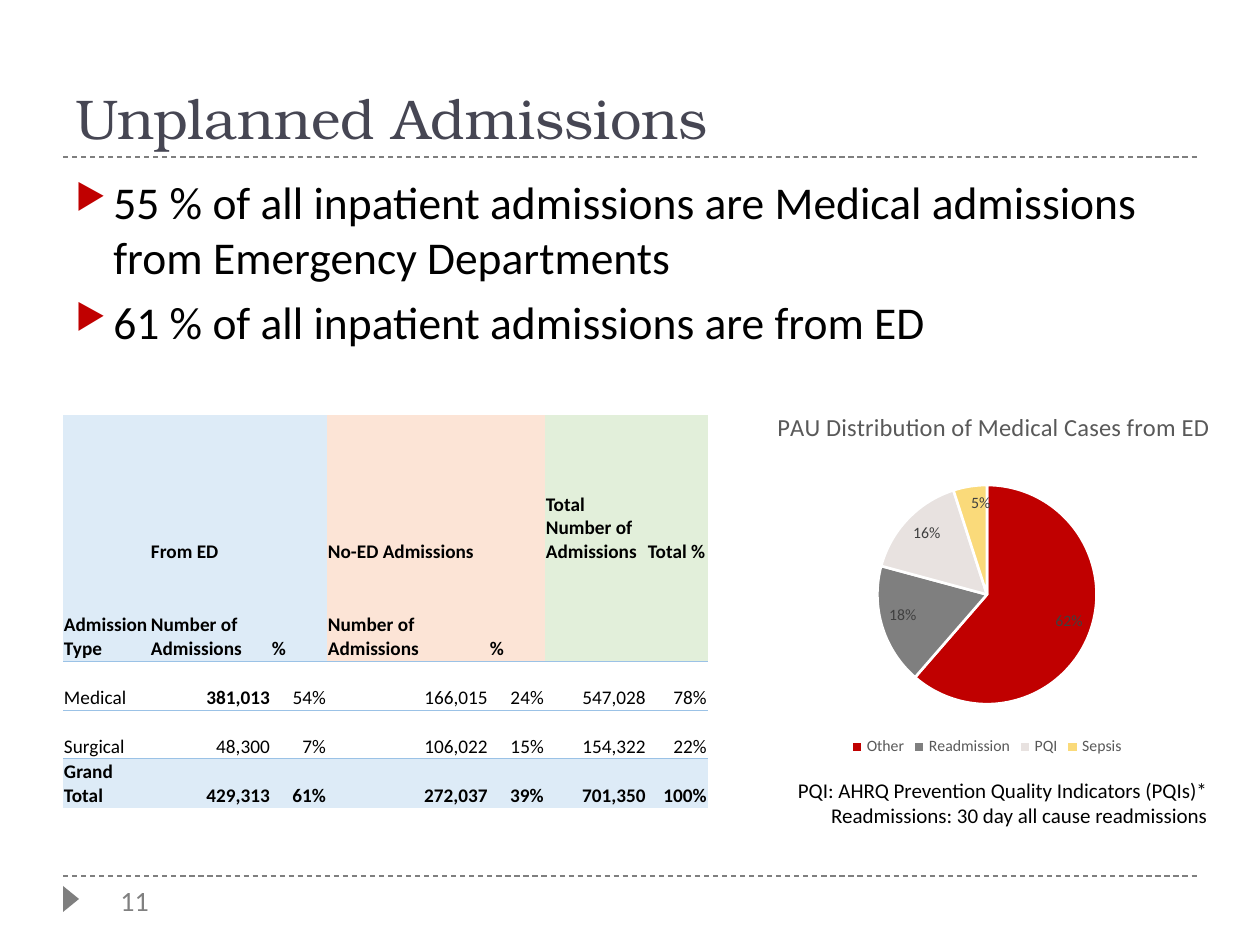
import lxml.etree
import pptx
import pptx.chart.data
import pptx.dml.color
import pptx.enum.chart
import pptx.enum.dml
import pptx.enum.shapes
import pptx.enum.text
import pptx.oxml.ns
import pptx.util

SCALE = 914400 / 126
GRAY, BLACK, RED = "7F7F7F", "000000", "C00000"
BLUE, ORANGE, GREEN = "DDEBF7", "FCE4D6", "E2EFDA"
ALIGN = pptx.enum.text.PP_ALIGN
ANCHOR = pptx.enum.text.MSO_ANCHOR


def px(*lengths):
    return [pptx.util.Emu(round(length * SCALE)) for length in lengths]


def color(value):
    return pptx.dml.color.RGBColor.from_string(value)


def apply(target, values):
    for name, value in values.items():
        setattr(target, name, value)


def add_xml(parent, tag, **attributes):
    element = lxml.etree.SubElement(parent, pptx.oxml.ns.qn(tag))
    for name, value in attributes.items():
        element.set(name, str(value))
    return element


def set_layout(parent, **fractions):
    layout = parent.find(pptx.oxml.ns.qn("c:layout"))
    if layout is None:
        layout = lxml.etree.Element(pptx.oxml.ns.qn("c:layout"))
        position = 1 if parent.tag.endswith("title") else 0
        parent.insert(position, layout)
    manual = add_xml(layout, "c:manualLayout")
    if "w" in fractions:
        add_xml(manual, "c:layoutTarget", val="inner")
    for axis in "xy":
        add_xml(manual, f"c:{axis}Mode", val="edge")
    for name, value in fractions.items():
        add_xml(manual, f"c:{name}", val=value)


class SlideBuilder:
    font_name = "Calibri"

    def __init__(self, presentation):
        self.slide = presentation.slides.add_slide(presentation.slide_layouts[5])

    def font(self, font, size, value=BLACK, **extra):
        apply(font, {"name": self.font_name, "size": pptx.util.Pt(size), **extra})
        font.color.rgb = color(value)

    def title(self, text, box):
        title = self.slide.shapes.title
        apply(title, dict(zip(("left", "top", "width", "height"), px(*box))))
        frame = title.text_frame
        apply(frame, {"text": text, "vertical_anchor": ANCHOR.BOTTOM, "word_wrap": True,
                      "auto_size": pptx.enum.text.MSO_AUTO_SIZE.NONE})
        frame.paragraphs[0].alignment = ALIGN.LEFT
        self.font(frame.paragraphs[0].font, 32, "464653", name="TeX Gyre Bonum")

    def text(self, lines, box, size, value=BLACK, align=ALIGN.LEFT, bullet=False, wrap=True):
        frame = self.slide.shapes.add_textbox(*px(*box)).text_frame
        apply(frame, {"text": "\n".join(lines), "word_wrap": wrap})
        for index, paragraph in enumerate(frame.paragraphs):
            paragraph.alignment = align
            if bullet:
                self.bullet(paragraph)
                paragraph.space_before = pptx.util.Pt(6 if index else 0)
            self.font(paragraph.font, size, value)

    def bullet(self, paragraph):
        properties = paragraph._p.get_or_add_pPr()
        indent = px(38)[0]
        properties.set("marL", str(indent))
        properties.set("indent", str(-indent))
        add_xml(add_xml(properties, "a:buClr"), "a:srgbClr", val=RED)
        add_xml(properties, "a:buSzPct", val=76000)
        add_xml(properties, "a:buChar", char="▶")

    def dashed_rule(self, left, right, top):
        connector = self.slide.shapes.add_connector(
            pptx.enum.shapes.MSO_CONNECTOR.STRAIGHT, *px(left, top, right, top))
        connector.line.color.rgb = color(GRAY)
        apply(connector.line, {"width": pptx.util.Pt(0.75),
                               "dash_style": pptx.enum.dml.MSO_LINE.DASH})
        add_xml(connector._element.spPr, "a:effectLst")

    def triangle(self, box):
        shape = self.slide.shapes.add_shape(
            pptx.enum.shapes.MSO_SHAPE.ISOSCELES_TRIANGLE, *px(*box))
        shape.rotation = 90
        shape.shadow.inherit = False
        shape.fill.solid()
        shape.fill.fore_color.rgb = color(GRAY)
        shape.line.fill.background()

    def pie(self, title, categories, values, colors, box):
        data = pptx.chart.data.CategoryChartData(number_format="0%")
        data.categories = categories
        data.add_series("Series 1", values)
        chart = self.slide.shapes.add_chart(
            pptx.enum.chart.XL_CHART_TYPE.PIE, *px(*box), data).chart
        self.font(chart.font, 10)
        chart.has_title = True
        chart.chart_title.text_frame.text = title
        self.font(chart.chart_title.text_frame.paragraphs[0].font, 14, "595959", bold=False)
        set_layout(chart.chart_title._element, x=0.16, y=0.06)
        chart.has_legend = True
        apply(chart.legend, {"position": pptx.enum.chart.XL_LEGEND_POSITION.BOTTOM,
                             "include_in_layout": False})
        self.font(chart.legend.font, 9, "595959")
        plot = chart.plots[0]
        apply(plot, {"vary_by_categories": True, "has_data_labels": True})
        apply(plot.data_labels, {
            "show_value": True, "show_percentage": False, "number_format": "0%",
            "number_format_is_linked": False,
            "position": pptx.enum.chart.XL_LABEL_POSITION.INSIDE_END})
        self.font(plot.data_labels.font, 9, "404040")
        for index, value in enumerate(colors):
            point_format = plot.series[0].points[index].format
            point_format.fill.solid()
            point_format.fill.fore_color.rgb = color(value)
            point_format.line.color.rgb = color("FFFFFF")
            point_format.line.width = pptx.util.Pt(1.5)
        set_layout(chart._chartSpace.chart.plotArea, x=0.325, y=0.27, w=0.35, h=0.58)

    def table(self, rows, fills, widths, heights, left, top, bold_cells, borders):
        table = self.slide.shapes.add_table(
            len(rows), len(widths), *px(left, top, sum(widths), sum(heights))).table
        apply(table, {"first_row": False, "horz_banding": False})
        style_id = table._tbl.tblPr.find(pptx.oxml.ns.qn("a:tableStyleId"))
        style_id.text = "{2D5ABB26-0587-4C30-8999-92F81FD0307C}"
        for column, width in zip(table.columns, px(*widths)):
            column.width = width
        for row, height in zip(table.rows, px(*heights)):
            row.height = height
        for row_index, texts in enumerate(rows):
            for column_index, text in enumerate(texts):
                cell = table.cell(row_index, column_index)
                self.border(cell, borders.get(row_index))
                self.cell(cell, text, fills[row_index][column_index],
                          (row_index, column_index) in bold_cells,
                          row_index > 1 and column_index > 0)

    def border(self, cell, edge):
        if edge:
            line = add_xml(cell._tc.get_or_add_tcPr(), edge, w=6350)
            add_xml(add_xml(line, "a:solidFill"), "a:srgbClr", val="9BC2E6")

    def cell(self, cell, text, fill, bold, numeric):
        margin = px(1)[0]
        apply(cell, {"margin_left": margin, "margin_right": margin, "margin_top": margin,
                     "margin_bottom": 0, "vertical_anchor": ANCHOR.BOTTOM})
        if fill:
            cell.fill.solid()
            cell.fill.fore_color.rgb = color(fill)
        else:
            cell.fill.background()
        if text:
            cell.text = text
            paragraph = cell.text_frame.paragraphs[0]
            paragraph.alignment = ALIGN.RIGHT if numeric else ALIGN.LEFT
            self.font(paragraph.font, 11, bold=bold)


def main():
    presentation = pptx.Presentation()
    presentation.slide_width, presentation.slide_height = px(1260, 945)
    builder = SlideBuilder(presentation)
    for top in (876, 157):
        builder.dashed_rule(63, 1197, top)
    builder.triangle((58, 891, 26, 16))
    builder.text(["11"], (108, 877, 59, 47), 16, "808080", wrap=False)
    builder.title("Unplanned Admissions", (63, 21, 1134, 136))
    builder.text(["55 % of all inpatient admissions are Medical admissions from Emergency Departments",
                  "61 % of all inpatient admissions are from ED"],
                 (63, 168, 1134, 680), 26, bullet=True)
    builder.text(["PQI: AHRQ Prevention Quality Indicators (PQIs)*",
                  "Readmissions: 30 day all cause readmissions"],
                 (265, 771, 955, 102), 12, align=ALIGN.RIGHT)
    builder.pie("PAU Distribution of Medical Cases from ED",
                ["Other", "Readmission", "PQI", "Sepsis"], [0.62, 0.18, 0.16, 0.05],
                [RED, GRAY, "E8E2E0", "FADA7A"], (672, 383, 630, 378))
    rows = [
        ["", "From ED", "", "No-ED Admissions", "", "Total Number of Admissions", "Total %"],
        ["Admission Type", "Number of Admissions", "%", "Number of Admissions", "%", "", ""],
        ["Medical", "381,013", "54%", "166,015", "24%", "547,028", "78%"],
        ["Surgical", "48,300", "7%", "106,022", "15%", "154,322", "22%"],
        ["Grand Total", "429,313", "61%", "272,037", "39%", "701,350", "100%"],
    ]
    header = [BLUE] * 3 + [ORANGE] * 2 + [GREEN] * 2
    fills = [header, header, [None] * 7, [None] * 7, [BLUE] * 7]
    bold_cells = {(row, column) for row in (0, 1, 4) for column in range(7)} | {(2, 1)}
    builder.table(rows, fills, [87, 121, 56, 162, 56, 102, 61], [149, 97, 49, 49, 49],
                  63, 415, bold_cells, {1: "a:lnB", 2: "a:lnT", 3: "a:lnB", 4: "a:lnT"})
    presentation.save("out.pptx")


if __name__ == "__main__":
    main()
